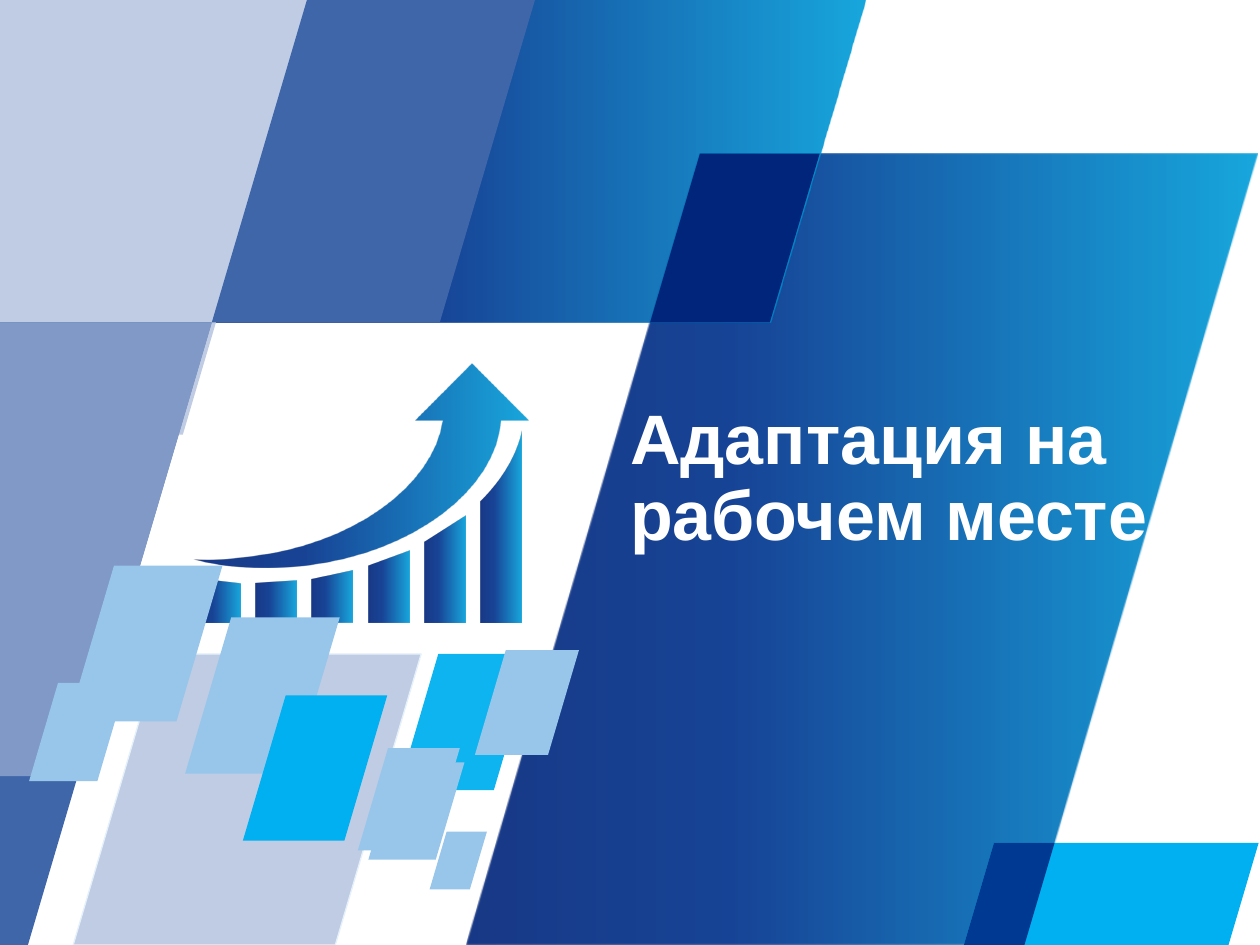
from dataclasses import dataclass

from lxml import etree
from pptx import Presentation
from pptx.dml.color import RGBColor
from pptx.enum.text import MSO_ANCHOR, MSO_AUTO_SIZE, PP_ALIGN
from pptx.oxml import parse_xml
from pptx.oxml.ns import qn
from pptx.util import Pt

TOP = MSO_ANCHOR.TOP
LEFT = PP_ALIGN.LEFT
FIXED = MSO_AUTO_SIZE.NONE
NS = "http://schemas.openxmlformats.org/drawingml/2006/main"

COLORS = {
    "navy": "00257A", "dark": "00338D", "blue": "009FDA", "cyan": "00B0F0",
    "mid": "4066AA", "soft": "8099C6", "pale": "BFCCE3", "edge": "E5F1FA",
    "sky": "98C6EA", "white": "FFFFFF",
}
FADE = [(0, "navy"), (35, "dark"), (100, "blue")]
FADE_ALPHA = 90
LEAN = 0.295  # sideways shift per unit of height

Point = tuple[float, float]


@dataclass
class Slab:
    """Leaning panel; left and width are those of its bottom edge."""
    left: float
    top: float
    width: float
    height: float
    color: str
    alpha: int = 100
    edge: str = ""
    cut: bool = False  # left side follows the slide edge


@dataclass
class Bar:
    start: float
    end: float
    bow: float = 0


SLABS = [
    Slab(266.4, 87.8, 319, 452.2, "fade"),
    Slab(550.8, 481.7, 151.2, 58.3, "cyan"),
    Slab(41.8, 373.7, 149.8, 166.3, "pale", edge="edge"),
    Slab(121, 0, 319, 184.3, "fade"),
    Slab(0, 0, 104.5, 248.4, "pale", cut=True),
    Slab(0, 184.3, 16, 355.7, "mid", cut=True),
    Slab(550.8, 481.7, 34.6, 58.3, "dark", alpha=95),
    Slab(371.5, 87.8, 68.4, 96.5, "navy"),
    Slab(227.5, 373.7, 54.7, 77.8, "cyan", alpha=95),
    Slab(121, 0, 130.3, 184.3, "mid"),
    Slab(0, 184.3, 44.6, 259.2, "soft", cut=True),
]
TILES = [
    Slab(105.8, 352.8, 62, 89.3, "sky"),
    Slab(16.6, 390.2, 39, 56.2, "sky"),
    Slab(245.5, 475.2, 23, 33.1, "sky"),
    Slab(210.5, 435.6, 38.5, 55.6, "sky"),
    Slab(204.5, 427.5, 41, 58.5, "sky"),
    Slab(271.4, 371.5, 41.8, 59.8, "sky"),
    Slab(38.9, 323.2, 62, 89, "sky"),
    Slab(138.8, 397.4, 58, 83, "cyan"),
]

BARS = [
    Bar(330.5, 333.4), Bar(333.4, 331.9), Bar(331.2, 326.2),
    Bar(323.3, 314.6), Bar(309.6, 294.5), Bar(286.6, 246.2, bow=9),
]
BAR_LEFT, BAR_STEP, BAR_WIDTH, BAR_BASE = 113.8, 32.2, 23.4, 355.7

HEAD = [(285.8, 240.5), (301.7, 240.5), (269.3, 208.1),
        (236.9, 240.5), (252.7, 240.5)]
SWEEP = [
    [(247, 277.9), (200.9, 311), (142.6, 317.5)],
    [(131, 319), (121, 319.7), (110.9, 319)],
    [(129.6, 324), (151.9, 325.4), (175, 322.6)],
    [(236.2, 315.4), (283, 279.4), (285.8, 240.5)],
]


def curve(a: Point, b: Point, c: Point, d: Point, steps: int = 16) -> list[Point]:
    """Points along a cubic Bezier, without its start."""
    points = []
    for n in range(1, steps + 1):
        t = n / steps
        u = 1 - t
        mix = (u ** 3, 3 * u * u * t, 3 * u * t * t, t ** 3)
        points.append(tuple(sum(m * p[k] for m, p in zip(mix, (a, b, c, d)))
                            for k in (0, 1)))
    return points


def fade(shape) -> None:
    """Fill with the blue left-to-right gradient."""
    stops = "".join(
        f'<a:gs pos="{pos * 1000}"><a:srgbClr val="{COLORS[name]}">'
        f'<a:alpha val="{FADE_ALPHA * 1000}"/></a:srgbClr></a:gs>'
        for pos, name in FADE)
    fill = parse_xml(f'<a:gradFill xmlns:a="{NS}" rotWithShape="1"><a:gsLst>'
                     f'{stops}</a:gsLst><a:lin ang="0" scaled="0"/></a:gradFill>')
    shape._element.spPr.find(qn("a:custGeom")).addnext(fill)


def draw(shapes, points: list[Point], color: str, alpha: int = 100,
         edge: str = "") -> None:
    spots = [(Pt(x), Pt(y)) for x, y in points]
    pen = shapes.build_freeform(*spots[0], scale=1.0)
    pen.add_line_segments(spots[1:], close=True)
    shape = pen.convert_to_shape()
    shape.shadow.inherit = False
    if color == "fade":
        fade(shape)
    else:
        shape.fill.solid()
        shape.fill.fore_color.rgb = RGBColor.from_string(COLORS[color])
        if alpha < 100:
            tint = shape._element.spPr.find(".//" + qn("a:srgbClr"))
            etree.SubElement(tint, qn("a:alpha")).set("val", str(alpha * 1000))
    if edge:
        shape.line.color.rgb = RGBColor.from_string(COLORS[edge])
        shape.line.width = Pt(0.75)
    else:
        shape.line.fill.background()


def draw_slab(shapes, slab: Slab) -> None:
    low = slab.top + slab.height
    shift = slab.height * LEAN
    right = slab.left + slab.width
    start = slab.left if slab.cut else slab.left + shift
    points = [(start, slab.top), (right + shift, slab.top),
              (right, low), (slab.left, low)]
    draw(shapes, points, slab.color, slab.alpha, slab.edge)


def draw_arrow(shapes) -> None:
    points = list(HEAD)
    for bend in SWEEP:
        points += curve(points[-1], *bend)
    draw(shapes, points[:-1], "fade")


def draw_bar(shapes, left: float, bar: Bar) -> None:
    def crest(part: float, bow: float) -> Point:
        return (left + part * BAR_WIDTH,
                bar.start + part * (bar.end - bar.start) + bow)

    first, last = crest(0, 0), crest(1, 0)
    rim = [last]
    if bar.bow:
        rim = curve(first, crest(0.53, bar.bow), crest(0.88, bar.bow), last)
    points = [(left, BAR_BASE), first, *rim, (left + BAR_WIDTH, BAR_BASE)]
    draw(shapes, points, "fade")


def set_title(slide) -> None:
    title = slide.shapes.title
    title.left, title.top = Pt(360), Pt(231.1)
    title.width, title.height = Pt(328.3), Pt(136.1)
    frame = title.text_frame
    frame.word_wrap = True
    frame.auto_size = FIXED
    frame.vertical_anchor = TOP
    frame.margin_left = frame.margin_right = Pt(0)
    frame.margin_top = frame.margin_bottom = Pt(0)
    para = frame.paragraphs[0]
    para.alignment = LEFT
    para.line_spacing = 0.9
    run = para.add_run()
    run.text = "Адаптация на рабочем месте"
    run.font.name = "Arial"
    run.font.size = Pt(40)
    run.font.bold = True
    run.font.color.rgb = RGBColor.from_string(COLORS["white"])
    slide.shapes._spTree.append(title._element)  # bring to front


def main() -> None:
    deck = Presentation()
    deck.slide_width, deck.slide_height = Pt(720), Pt(540)
    slide = deck.slides.add_slide(deck.slide_layouts[5])
    shapes = slide.shapes
    for slab in SLABS:
        draw_slab(shapes, slab)
    draw_arrow(shapes)
    for n, bar in enumerate(BARS):
        draw_bar(shapes, BAR_LEFT + n * BAR_STEP, bar)
    for tile in TILES:
        draw_slab(shapes, tile)
    set_title(slide)
    deck.save("out.pptx")


if __name__ == "__main__":
    main()
